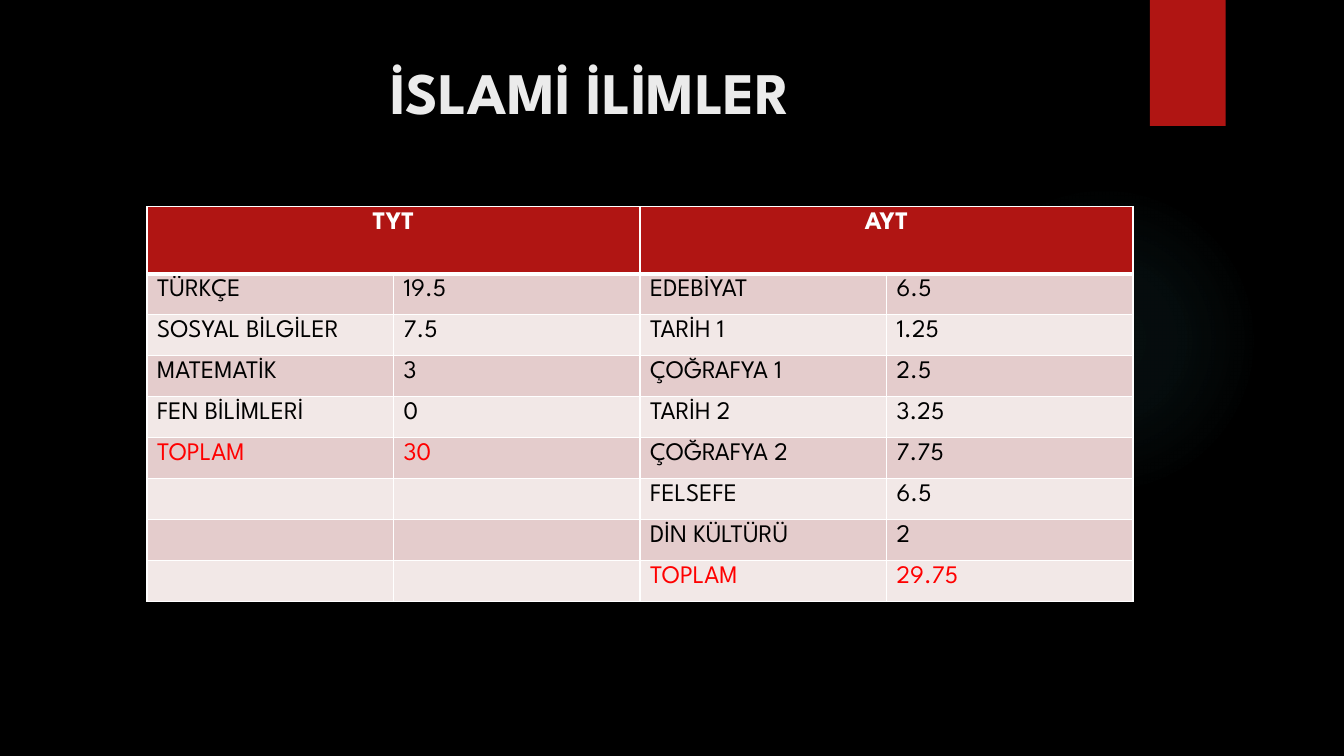
from lxml.etree import SubElement
from pptx import Presentation
from pptx.dml.color import RGBColor
from pptx.enum.shapes import MSO_SHAPE
from pptx.enum.text import MSO_ANCHOR, PP_ALIGN
from pptx.oxml import parse_xml
from pptx.oxml.ns import nsdecls, qn
from pptx.util import Inches, Pt

BLACK = RGBColor(0x00, 0x00, 0x00)
WHITE = RGBColor(0xFF, 0xFF, 0xFF)
PALE = RGBColor(0xEB, 0xEB, 0xEB)
CRIMSON = RGBColor(0xB0, 0x15, 0x13)
RED = RGBColor(0xFF, 0x00, 0x00)
ROSE = RGBColor(0xE4, 0xCC, 0xCC)
BLUSH = RGBColor(0xF2, 0xE8, 0xE7)
TEAL = RGBColor(0x50, 0xB9, 0xC1)

COLS, ROWS = 160, 90  # slide grid, twelve units to the inch
HEADS = ["TYT", "AYT"]
TOTAL = "TOPLAM"
TYT = [("TÜRKÇE", "19.5"), ("SOSYAL BİLGİLER", "7.5"), ("MATEMATİK", "3"),
       ("FEN BİLİMLERİ", "0"), (TOTAL, "30")]
AYT = [("EDEBİYAT", "6.5"), ("TARİH 1", "1.25"), ("ÇOĞRAFYA 1", "2.5"),
       ("TARİH 2", "3.25"), ("ÇOĞRAFYA 2", "7.75"), ("FELSEFE", "6.5"),
       ("DİN KÜLTÜRÜ", "2"), (TOTAL, "29.75")]


def grid(*units):
    return [Inches(unit / 12) for unit in units]


class Deck:
    font = "League Spartan"

    def __init__(self):
        self.prs = Presentation()
        self.prs.slide_width, self.prs.slide_height = grid(COLS, ROWS)
        self.slide = self.prs.slides.add_slide(self.prs.slide_layouts[5])
        fill = self.slide.background.fill
        fill.solid()
        fill.fore_color.rgb = BLACK

    def label(self, frame, text, size, color, bold=False, align=PP_ALIGN.LEFT):
        frame.text = text
        para = frame.paragraphs[0]
        para.alignment = align
        font = para.runs[0].font if text else para.font
        font.name, font.size, font.bold = self.font, Pt(size), bold
        font.color.rgb = color

    def title(self, text, *box):
        shape = self.slide.shapes.title
        shape.left, shape.top, shape.width, shape.height = grid(*box)
        shape.text_frame.vertical_anchor = MSO_ANCHOR.TOP
        self.label(shape.text_frame, text, 42, PALE, True, PP_ALIGN.CENTER)

    def shape(self, kind, color, *box):
        shape = self.slide.shapes.add_shape(kind, *grid(*box))
        shape.shadow.inherit = False
        shape.line.fill.background()
        shape.fill.solid()
        shape.fill.fore_color.rgb = color
        return shape

    def glow(self, color, stops, *box):
        props = self.shape(MSO_SHAPE.OVAL, color, *box)._element.spPr
        marks = "".join(
            f'<a:gs pos="{pos * 1000}"><a:srgbClr val="{color}">'
            f'<a:alpha val="{alpha * 1000}"/></a:srgbClr></a:gs>'
            for pos, alpha in stops)
        mid = " ".join(f'{side}="50000"' for side in "ltrb")
        props.replace(props.find(qn("a:solidFill")), parse_xml(
            f'<a:gradFill {nsdecls("a")}><a:gsLst>{marks}</a:gsLst>'
            f'<a:path path="circle"><a:fillToRect {mid}/></a:path></a:gradFill>'))

    def border(self, cell, top, base):
        props = cell._tc.get_or_add_tcPr()
        for spot, (side, width) in enumerate(zip("LRTB", (1, 1, top, base))):
            line = SubElement(props, qn(f"a:ln{side}"), w=str(Pt(width)))
            fill = SubElement(line, qn("a:solidFill"))
            SubElement(fill, qn("a:srgbClr"), val=str(WHITE))
            props.insert(spot, line)

    def cell(self, cell, text, back, color, top=1, base=1, **style):
        cell.fill.solid()
        cell.fill.fore_color.rgb = back
        self.border(cell, top, base)
        self.label(cell.text_frame, text, 18, color, **style)

    def table(self, heads, groups, head, row, *box):
        count = max(map(len, groups))
        left, top, width = box
        frame = self.slide.shapes.add_table(
            count + 1, 2 * len(heads), *grid(left, top, width, head + count * row))
        table = frame.table
        for line, high in zip(table.rows, [head] + [row] * count):
            line.height = grid(high)[0]
        for pair, (name, group) in enumerate(zip(heads, groups)):
            # Header across both columns of the group
            first, last = table.cell(0, 2 * pair), table.cell(0, 2 * pair + 1)
            first.merge(last)
            for cell, text in ((first, name), (last, "")):
                self.cell(cell, text, CRIMSON, WHITE, base=3,
                          bold=True, align=PP_ALIGN.CENTER)
            # Banded rows, totals in red
            filled = group + [("", "")] * (count - len(group))
            for num, entry in enumerate(filled, 1):
                back = ROSE if num % 2 else BLUSH
                color = RED if entry[0] == TOTAL else BLACK
                for side, text in enumerate(entry):
                    self.cell(table.cell(num, 2 * pair + side), text, back,
                              color, top=3 if num == 1 else 1)


def main():
    deck = Deck()
    # Backdrop
    deck.glow(TEAL, [(0, 7), (36, 6), (69, 0)], 112.9, 22, 37, 37)
    deck.shape(MSO_SHAPE.RECTANGLE, CRIMSON, 136.9, 0, 9, 15)
    # Content
    deck.title("İSLAMİ İLİMLER", 8.5, 6, 123.5, 18.4)
    deck.table(HEADS, [TYT, AYT], 8, 4.88, 17.5, 24.6, 117.4)
    deck.prs.save("out.pptx")


if __name__ == "__main__":
    main()
